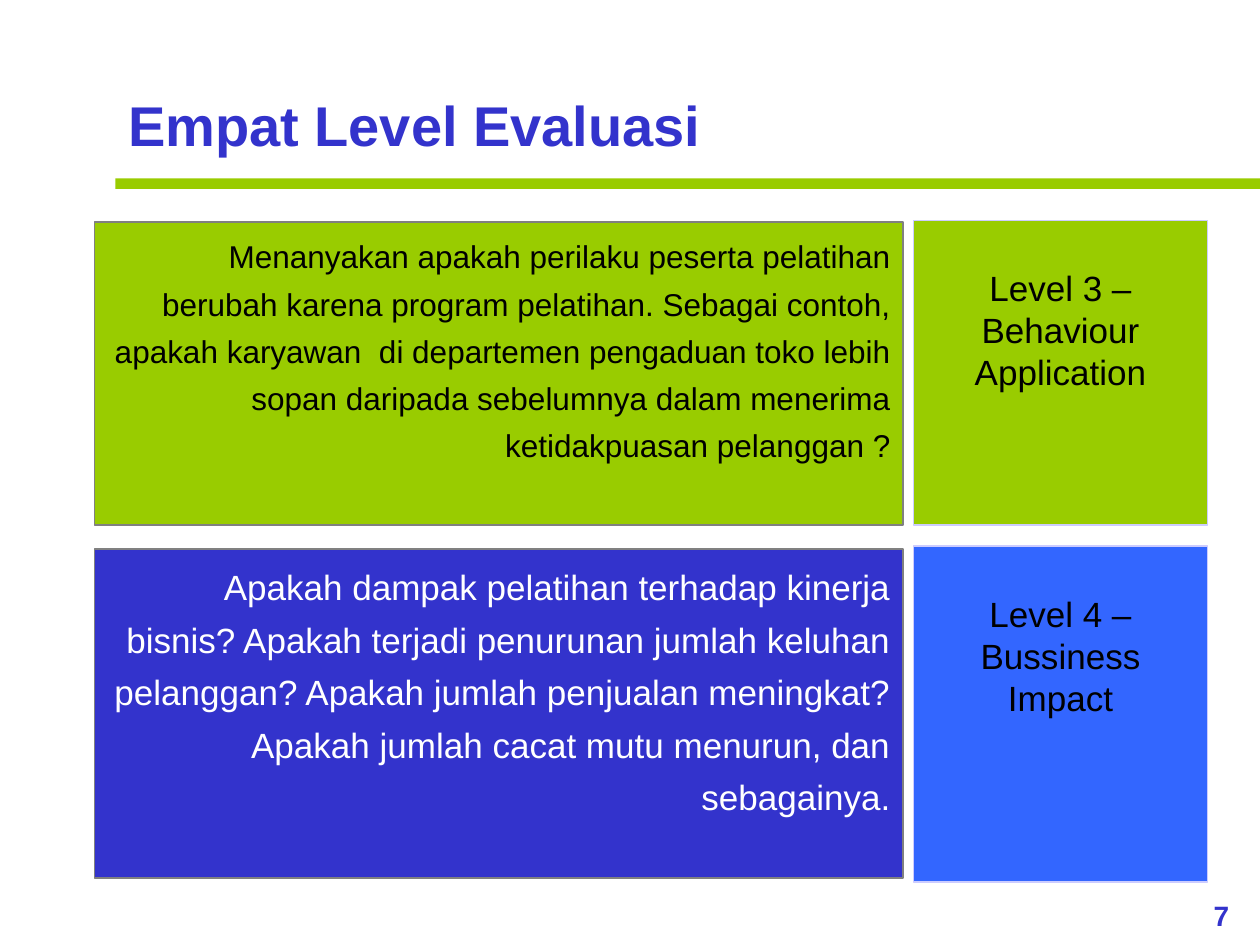
"""Build the slide on evaluation levels 3 and 4."""
from pptx import Presentation
from pptx.dml.color import RGBColor
from pptx.enum.shapes import MSO_SHAPE
from pptx.enum.text import MSO_ANCHOR, MSO_AUTO_SIZE, PP_ALIGN
from pptx.util import Pt

RECTANGLE = MSO_SHAPE.RECTANGLE
TOP = MSO_ANCHOR.TOP
NO_FIT = MSO_AUTO_SIZE.NONE
LEFT, CENTER, RIGHT = PP_ALIGN.LEFT, PP_ALIGN.CENTER, PP_ALIGN.RIGHT

THEME = {
    "font": "Arial",
    "blue": "3333CC", "bright": "3366FF", "green": "99CC00",
    "black": "000000", "white": "FFFFFF",
    "gray_edge": "808080", "pale_edge": "CCCCFF",
    "title": 32, "large": 20, "normal": 18, "number": 16,
}

TITLE = "Empat Level Evaluasi"
PAGE_NUMBER = "7"
LEVELS = [
    {
        "label": "Level 3 – Behaviour Application",
        "question": "Menanyakan apakah perilaku peserta pelatihan berubah karena "
                    "program pelatihan. Sebagai contoh, apakah karyawan  di departemen "
                    "pengaduan toko lebih sopan daripada sebelumnya dalam menerima "
                    "ketidakpuasan pelanggan ?",
        "label_fill": "green", "question_fill": "green",
        "ink": "black", "size": "normal",
        "label_span": (126, 174), "question_span": (126.7, 173.5),
    },
    {
        "label": "Level 4 – Bussiness Impact",
        "question": "Apakah dampak pelatihan terhadap kinerja bisnis? Apakah terjadi "
                    "penurunan jumlah keluhan pelanggan? Apakah jumlah penjualan "
                    "meningkat? Apakah jumlah cacat mutu menurun, dan sebagainya.",
        "label_fill": "bright", "question_fill": "blue",
        "ink": "white", "size": "large",
        "label_span": (312, 192), "question_span": (313.8, 188),
    },
]

QUESTION_X, QUESTION_W = 54, 462
LABEL_X, LABEL_W, LABEL_H, LABEL_DROP = 522, 168, 79.2, 23
RULE_X, SLIDE_W, SLIDE_H = 66, 720, 540


def color(name):
    return RGBColor.from_string(THEME[name])


def write(holder, text, size, ink, align, bold=False, spacing=None, wrap=True):
    frame = holder.text_frame
    frame.text = text
    frame.word_wrap = wrap
    frame.auto_size = NO_FIT
    frame.vertical_anchor = TOP
    paragraph = frame.paragraphs[0]
    paragraph.alignment = align
    paragraph.line_spacing = spacing
    font = paragraph.font
    font.name, font.size, font.bold = THEME["font"], Pt(THEME[size]), bold
    font.color.rgb = color(ink)


def add_panel(slide, box, fill, edge=None, edge_width=1):
    panel = slide.shapes.add_shape(RECTANGLE, *map(Pt, box))
    panel.shadow.inherit = False
    panel.fill.solid()
    panel.fill.fore_color.rgb = color(fill)
    if edge:
        panel.line.color.rgb = color(edge)
        panel.line.width = Pt(edge_width)
    else:
        panel.line.fill.background()
    return panel


def add_level(slide, level):
    top, height = level["label_span"]
    add_panel(slide, (LABEL_X, top, LABEL_W, height), level["label_fill"], "pale_edge", 0.75)
    label = slide.shapes.add_textbox(*map(Pt, (LABEL_X, top + LABEL_DROP, LABEL_W, LABEL_H)))
    write(label, level["label"], "large", "black", CENTER)

    top, height = level["question_span"]
    question = add_panel(slide, (QUESTION_X, top, QUESTION_W, height),
                         level["question_fill"], "gray_edge")
    write(question, level["question"], level["size"], level["ink"], RIGHT, spacing=1.25)


def main():
    deck = Presentation()
    deck.slide_width, deck.slide_height = Pt(SLIDE_W), Pt(SLIDE_H)
    slide = deck.slides.add_slide(deck.slide_layouts[5])

    title = slide.shapes.title
    title.left, title.top, title.width, title.height = map(Pt, (RULE_X, 48, 344, 46))
    write(title, TITLE, "title", "blue", LEFT, bold=True, wrap=False)
    add_panel(slide, (RULE_X, 102, SLIDE_W - RULE_X, 6), "green")

    for level in LEVELS:
        add_level(slide, level)

    number = slide.shapes.add_textbox(*map(Pt, (676, 510, 44, 26.6)))
    write(number, PAGE_NUMBER, "number", "blue", CENTER, bold=True)
    deck.save("out.pptx")


if __name__ == "__main__":
    main()
